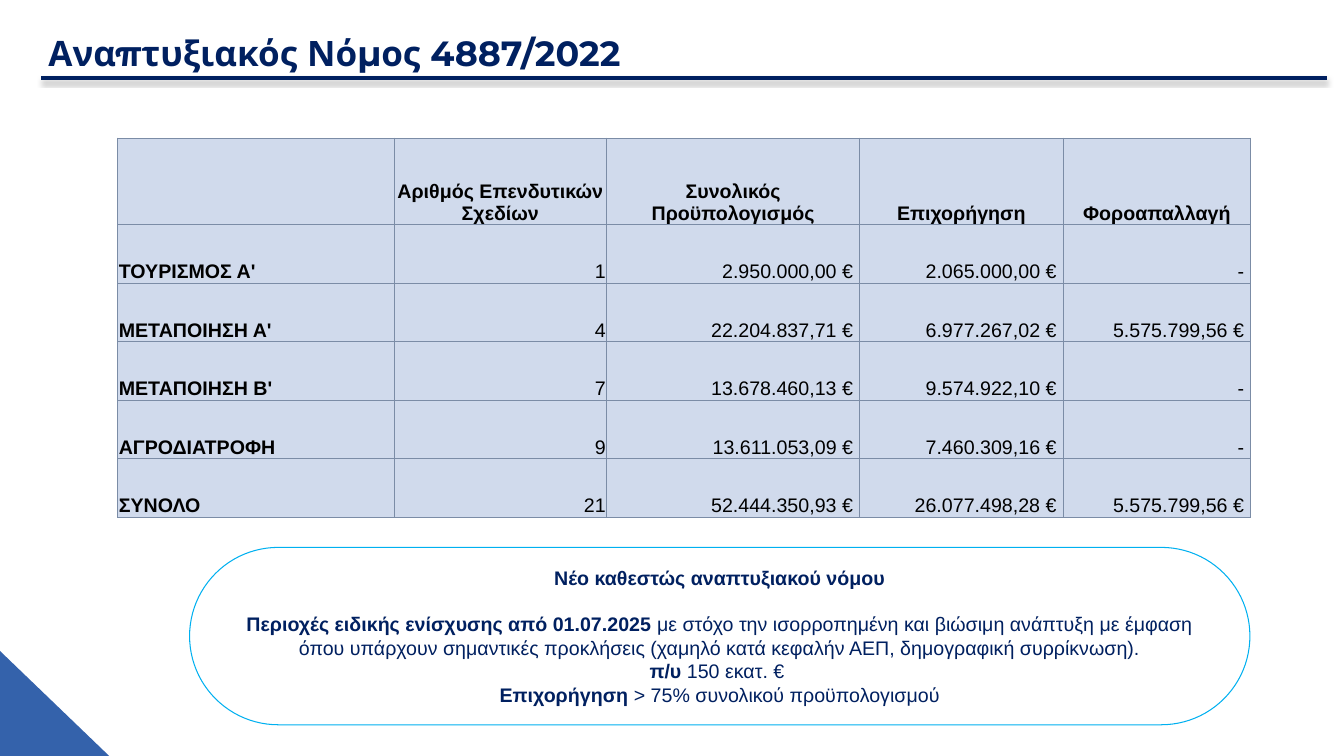
from lxml.etree import SubElement
from pptx import Presentation
from pptx.dml.color import RGBColor
from pptx.enum.shapes import MSO_CONNECTOR, MSO_SHAPE
from pptx.enum.text import MSO_ANCHOR as Anchor, PP_ALIGN as Align
from pptx.oxml.ns import qn
from pptx.util import Pt

NAVY, BLUE, CYAN = "002060", "3462AB", "00B0F0"
CELL_FILL, CELL_BORDER = "D0DAEC", "7B8CA6"
WHITE, BLACK = "FFFFFF", "000000"

COLUMN_WIDTHS = [197.3, 151.9, 180.7, 145.4, 133.9]
ROW_HEIGHTS = [61.9] + [41.8] * 5
ROWS = [
    ["", "Αριθμός Επενδυτικών Σχεδίων", "Συνολικός Προϋπολογισμός", "Επιχορήγηση", "Φοροαπαλλαγή"],
    ["ΤΟΥΡΙΣΜΟΣ Α'", "1", "2.950.000,00 €", "2.065.000,00 €", "-"],
    ["ΜΕΤΑΠΟΙΗΣΗ Α'", "4", "22.204.837,71 €", "6.977.267,02 €", "5.575.799,56 €"],
    ["ΜΕΤΑΠΟΙΗΣΗ Β'", "7", "13.678.460,13 €", "9.574.922,10 €", "-"],
    ["ΑΓΡΟΔΙΑΤΡΟΦΗ", "9", "13.611.053,09 €", "7.460.309,16 €", "-"],
    ["ΣΥΝΟΛΟ", "21", "52.444.350,93 €", "26.077.498,28 €", "5.575.799,56 €"],
]
# Each paragraph is a bold lead and a regular remainder
SCHEME = [
    ("Νέο καθεστώς αναπτυξιακού νόμου", ""),
    ("Περιοχές ειδικής ενίσχυσης από 01.07.2025 ",
     "με στόχο την ισορροπημένη και βιώσιμη ανάπτυξη με έμφαση όπου υπάρχουν "
     "σημαντικές προκλήσεις (χαμηλό κατά κεφαλήν ΑΕΠ, δημογραφική συρρίκνωση)."),
    ("π/υ", " 150 εκατ. € "),
    ("Επιχορήγηση", " > 75% συνολικού προϋπολογισμού"),
]


def color(hex_value):
    return RGBColor.from_string(hex_value)


class SlideBuilder:
    def __init__(self, slide, font="Arial", size=14):
        self.slide = slide
        self.font = font
        self.size = size

    def style(self, run, hex_value, bold=False, font=None, size=None):
        run.font.name = font or self.font
        run.font.size = Pt(size or self.size)
        run.font.bold = bold
        run.font.color.rgb = color(hex_value)

    def shape(self, kind, left, top, width, height, fill, line=None):
        shape = self.slide.shapes.add_shape(kind, Pt(left), Pt(top), Pt(width), Pt(height))
        shape.shadow.inherit = False
        shape.fill.solid()
        shape.fill.fore_color.rgb = color(fill)
        if line:
            shape.line.color.rgb = color(line)
            shape.line.width = Pt(0.75)
        else:
            shape.line.fill.background()
        return shape

    def title(self, text, left, top, width, height):
        frame = self.slide.shapes.add_textbox(Pt(left), Pt(top), Pt(width), Pt(height)).text_frame
        frame.word_wrap = True
        frame.vertical_anchor = Anchor.MIDDLE
        frame.margin_left = frame.margin_right = frame.margin_top = frame.margin_bottom = 0
        frame.text = text
        self.style(frame.paragraphs[0].runs[0], NAVY, True, "Montserrat", 25)

    def rule(self, left, right, y):
        line = self.slide.shapes.add_connector(
            MSO_CONNECTOR.STRAIGHT, Pt(left), Pt(y), Pt(right), Pt(y))
        line.line.color.rgb = color(NAVY)
        line.line.width = Pt(3)
        # Soft shadow below the line
        effects = SubElement(line._element.spPr, qn("a:effectLst"))
        shadow = SubElement(effects, qn("a:outerShdw"), blurRad=str(Pt(3.1)), dist=str(Pt(1.8)),
                            dir="5400000", rotWithShape="0")
        tint = SubElement(shadow, qn("a:srgbClr"), val=BLACK)
        SubElement(tint, qn("a:alpha"), val="35000")

    def border(self, cell):
        properties = cell._tc.get_or_add_tcPr()
        for position, side in enumerate(("lnL", "lnR", "lnT", "lnB")):
            line = SubElement(properties, qn(f"a:{side}"), w=str(Pt(0.75)))
            fill = SubElement(line, qn("a:solidFill"))
            SubElement(fill, qn("a:srgbClr"), val=CELL_BORDER)
            properties.insert(position, line)

    def cell(self, cell, text, align, bold, right_margin):
        cell.fill.solid()
        cell.fill.fore_color.rgb = color(CELL_FILL)
        self.border(cell)
        cell.vertical_anchor = Anchor.BOTTOM
        cell.margin_left = cell.margin_top = Pt(0.7)
        cell.margin_right = Pt(right_margin)
        cell.margin_bottom = 0
        cell.text_frame.text = text
        paragraph = cell.text_frame.paragraphs[0]
        paragraph.alignment = align
        for run in paragraph.runs:
            self.style(run, BLACK, bold)

    def table(self, rows, left, top):
        table = self.slide.shapes.add_table(
            len(rows), len(rows[0]), Pt(left), Pt(top),
            Pt(sum(COLUMN_WIDTHS)), Pt(sum(ROW_HEIGHTS))).table
        for column, width in zip(table.columns, COLUMN_WIDTHS):
            column.width = Pt(width)
        for row, height in zip(table.rows, ROW_HEIGHTS):
            row.height = Pt(height)
        for r, values in enumerate(rows):
            for c, value in enumerate(values):
                align = Align.CENTER if r == 0 else Align.LEFT if c == 0 else Align.RIGHT
                amount = r > 0 and c > 1
                self.cell(table.cell(r, c), value, align, r == 0 or c == 0, 4.6 if amount else 0.7)

    def callout(self, paragraphs, left, top, width, height):
        shape = self.shape(MSO_SHAPE.ROUNDED_RECTANGLE, left, top, width, height, WHITE, CYAN)
        shape.adjustments[0] = 0.5
        frame = shape.text_frame
        frame.word_wrap = True
        frame.vertical_anchor = Anchor.MIDDLE
        for index, parts in enumerate(paragraphs):
            paragraph = frame.paragraphs[0] if index == 0 else frame.add_paragraph()
            paragraph.alignment = Align.CENTER
            for text, bold in zip(parts, (True, False)):
                if text:
                    run = paragraph.add_run()
                    run.text = text
                    self.style(run, NAVY, bold)
        frame.paragraphs[0].space_after = Pt(16.5)


def main():
    presentation = Presentation()
    presentation.slide_width, presentation.slide_height = Pt(960), Pt(540)
    builder = SlideBuilder(presentation.slides.add_slide(presentation.slide_layouts[6]))

    # Corner accent and heading
    builder.shape(MSO_SHAPE.RIGHT_TRIANGLE, 0, 465, 78, 75, BLUE)
    builder.title("Αναπτυξιακός Νόμος 4887/2022", 34.6, 23, 919.4, 29.5)
    builder.rule(29.5, 948.2, 56)

    # Investment plans by sector
    builder.table(ROWS, 84.2, 98.6)

    # New scheme
    builder.callout(SCHEME, 135.4, 391, 757.4, 126.7)

    presentation.save("out.pptx")


if __name__ == "__main__":
    main()
